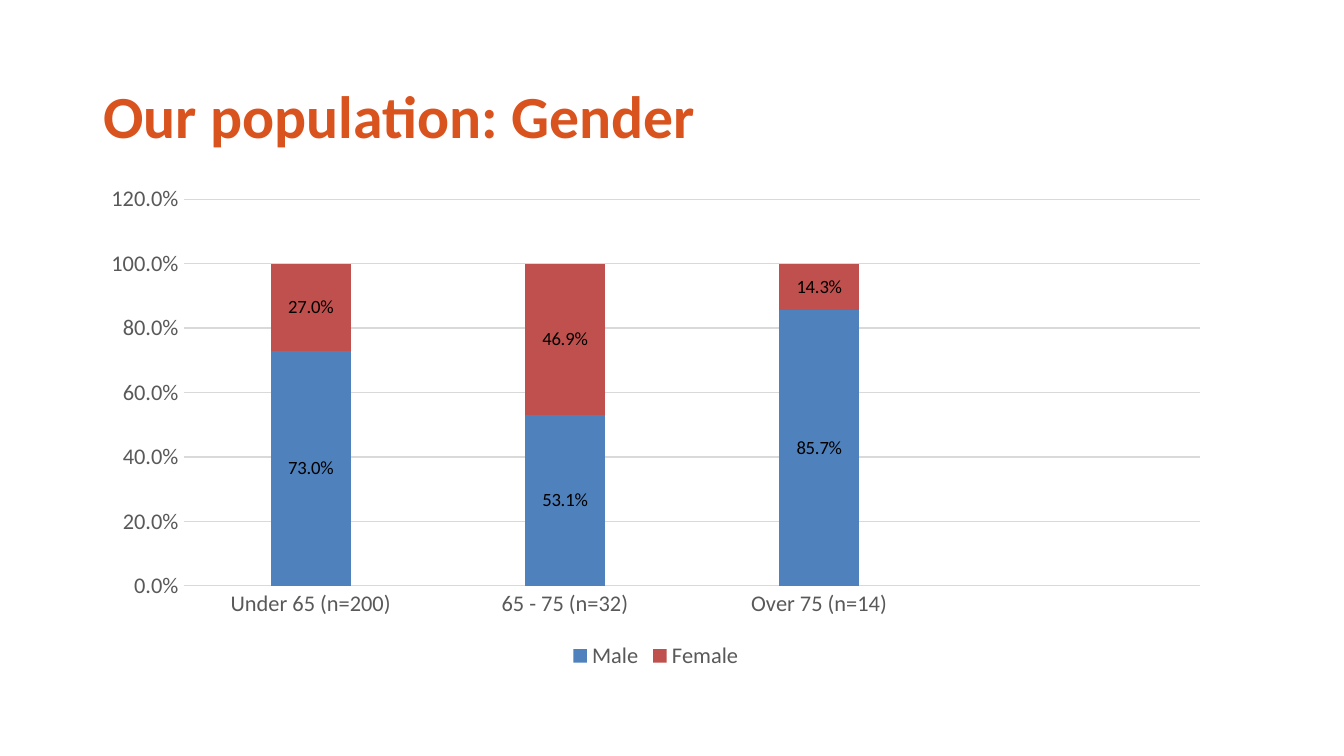
from pptx import Presentation
from pptx.chart.data import CategoryChartData
from pptx.dml.color import RGBColor
from pptx.enum.chart import XL_CHART_TYPE, XL_LABEL_POSITION, XL_LEGEND_POSITION, XL_TICK_MARK
from pptx.enum.text import MSO_ANCHOR
from pptx.util import Inches, Pt

STACKED = XL_CHART_TYPE.COLUMN_STACKED
CENTER = XL_LABEL_POSITION.CENTER
BOTTOM = XL_LEGEND_POSITION.BOTTOM
NO_TICK = XL_TICK_MARK.NONE
MIDDLE = MSO_ANCHOR.MIDDLE

ORANGE = RGBColor(0xD9, 0x53, 0x1E)
BLUE = RGBColor(0x4F, 0x81, 0xBD)
RED = RGBColor(0xC0, 0x50, 0x4D)
BLACK = RGBColor(0, 0, 0)
GRAY = RGBColor(0x59, 0x59, 0x59)
LIGHT_GRAY = RGBColor(0xD9, 0xD9, 0xD9)

FONT = "Calibri"
PERCENT = "0.0%"
AGE_GROUPS = ["Under 65 (n=200)", "65 - 75 (n=32)", "Over 75 (n=14)", ""]
GENDERS = [
    ("Male", [0.73, 0.531, 0.857, None], BLUE),
    ("Female", [0.27, 0.469, 0.143, None], RED),
]


def style_font(font, size, color, bold=False):
    """Set typeface, size, colour and weight."""
    font.name = FONT
    font.size = Pt(size)
    font.color.rgb = color
    font.bold = bold


def style_line(line):
    """Make a thin light gray line."""
    line.color.rgb = LIGHT_GRAY
    line.width = Pt(0.75)


def add_title(page, left, top, width, height):
    """Write the slide heading in the given box."""
    box = page.shapes.add_textbox(left, top, width, height)
    frame = box.text_frame
    frame.word_wrap = True
    frame.vertical_anchor = MIDDLE
    span = frame.paragraphs[0].add_run()
    span.text = "Our population: Gender"
    style_font(span.font, 32, ORANGE, bold=True)


def style_axes(chart):
    """Format the age axis, the share axis and its gridlines."""
    for axis in (chart.category_axis, chart.value_axis):
        axis.major_tick_mark = NO_TICK
        axis.minor_tick_mark = NO_TICK
        style_font(axis.tick_labels.font, 12, GRAY)
    style_line(chart.category_axis.format.line)
    shares = chart.value_axis
    shares.minimum_scale = 0
    shares.maximum_scale = 1.2
    shares.major_unit = 0.2
    shares.format.line.fill.background()
    shares.has_major_gridlines = True
    style_line(shares.major_gridlines.format.line)
    shares.tick_labels.number_format = PERCENT
    shares.tick_labels.number_format_is_linked = False


def add_gender_chart(page, left, top, width, height):
    """Draw the stacked gender shares by age group in the given box."""
    data = CategoryChartData(number_format=PERCENT)
    data.categories = AGE_GROUPS
    for name, values, _ in GENDERS:
        data.add_series(name, values)
    chart = page.shapes.add_chart(STACKED, left, top, width, height, data).chart
    style_font(chart.font, 10, BLACK)
    chart.has_title = False
    style_axes(chart)

    plot = chart.plots[0]
    plot.gap_width = 219
    plot.overlap = 100
    plot.vary_by_categories = False
    for series, (_, _, color) in zip(plot.series, GENDERS):
        series.format.fill.solid()
        series.format.fill.fore_color.rgb = color
        labels = series.data_labels
        labels.show_value = True
        labels.number_format = PERCENT
        labels.number_format_is_linked = False
        labels.position = CENTER
        style_font(labels.font, 10, BLACK)

    chart.has_legend = True
    chart.legend.position = BOTTOM
    chart.legend.include_in_layout = False
    style_font(chart.legend.font, 12, GRAY)


def main():
    """Build and save the deck."""
    deck = Presentation()
    deck.slide_width = Inches(10)
    deck.slide_height = deck.slide_width * 9 // 16
    page = deck.slides.add_slide(deck.slide_layouts[6])
    add_title(page, Inches(0.67), Inches(0.47), Inches(7.4), Inches(0.77))
    add_gender_chart(page, Inches(0.66), Inches(1.31), Inches(8.44), Inches(3.71))
    deck.save("out.pptx")


if __name__ == "__main__":
    main()
